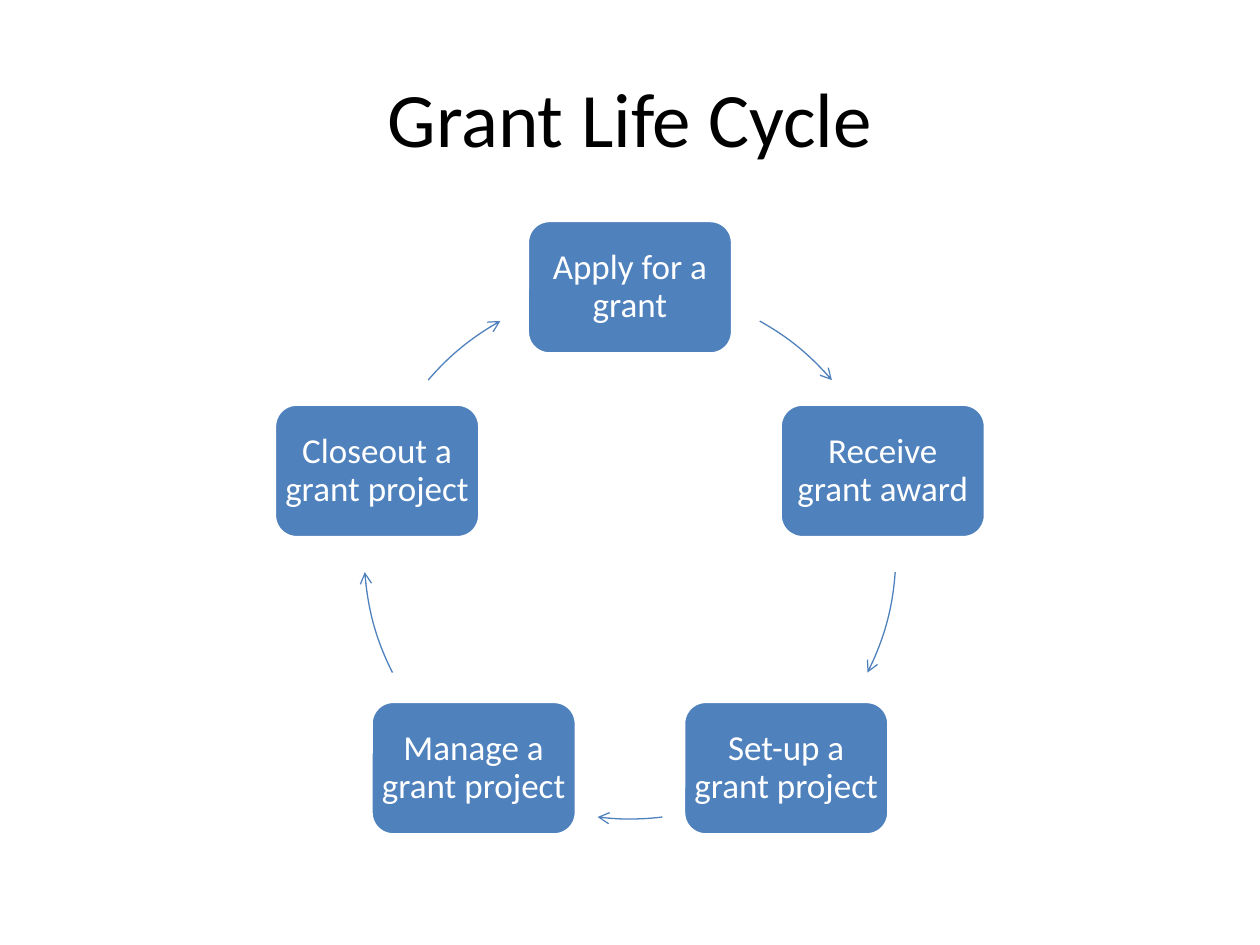
from math import cos, radians, sin

from lxml import etree
from pptx import Presentation
from pptx.dml.color import RGBColor
from pptx.enum.shapes import MSO_SHAPE
from pptx.enum.text import MSO_ANCHOR, PP_ALIGN
from pptx.oxml.ns import qn
from pptx.util import Inches, Pt

ROUND_RECT = MSO_SHAPE.ROUNDED_RECTANGLE
ARC = MSO_SHAPE.ARC
MIDDLE = MSO_ANCHOR.MIDDLE
CENTER = PP_ALIGN.CENTER

COLORS = {"blue": "4F81BD", "white": "FFFFFF", "black": "000000"}
CENTER_X, CENTER_Y, RADIUS = 5, 4.39, 2.11
BOX_W, BOX_H = 1.63, 1.06
STEPS = [
    "Apply for a grant",
    "Receive grant award",
    "Set-up a grant project",
    "Manage a grant project",
    "Closeout a grant project",
]
ARROW_ANGLES = [(299.2, 319.4), (4.1, 26.7), (83, 97), (153.3, 175.9), (220.6, 240.8)]


def rgb(name):
    return RGBColor.from_string(COLORS[name])


def set_text(shape, text, size, color, inset=0.1, spacing=1.0):
    tf = shape.text_frame
    tf.word_wrap = True
    tf.vertical_anchor = MIDDLE
    tf.margin_left = tf.margin_right = Inches(inset)
    tf.margin_top = tf.margin_bottom = Inches(inset)
    p = tf.paragraphs[0]
    p.alignment = CENTER
    p.line_spacing = spacing
    r = p.add_run()
    r.text = text
    r.font.name = "Calibri"
    r.font.size = Pt(size)
    r.font.color.rgb = rgb(color)


def add_title(s, text):
    tb = s.shapes.add_textbox(Inches(0.5), Inches(0.3), Inches(9), Inches(1.25))
    set_text(tb, text, size=44, color="black")


def add_step(s, text, angle):
    x = CENTER_X + RADIUS * cos(radians(angle)) - BOX_W / 2
    y = CENTER_Y + RADIUS * sin(radians(angle)) - BOX_H / 2
    sp = s.shapes.add_shape(ROUND_RECT, Inches(x), Inches(y), Inches(BOX_W), Inches(BOX_H))
    sp.shadow.inherit = False
    sp.fill.solid()
    sp.fill.fore_color.rgb = rgb("blue")
    sp.line.color.rgb = rgb("white")
    sp.line.width = Pt(2)
    set_text(sp, text, size=20, color="white", inset=0.03, spacing=0.9)


def add_arc_arrow(s, start, end):
    sp = s.shapes.add_shape(ARC, Inches(CENTER_X - RADIUS), Inches(CENTER_Y - RADIUS),
                            Inches(2 * RADIUS), Inches(2 * RADIUS))
    sp.shadow.inherit = False
    sp.fill.background()
    sp.adjustments[0] = start * 0.6
    sp.adjustments[1] = end * 0.6
    sp.line.color.rgb = rgb("blue")
    sp.line.width = Pt(0.75)
    ln = sp.line._get_or_add_ln()
    etree.SubElement(ln, qn("a:tailEnd"), type="arrow")


def main():
    prs = Presentation()
    prs.slide_width, prs.slide_height = Inches(10), Inches(7.5)
    s = prs.slides.add_slide(prs.slide_layouts[6])
    add_title(s, "Grant Life Cycle")
    for i, (text, (start, end)) in enumerate(zip(STEPS, ARROW_ANGLES)):
        add_step(s, text, -90 + i * 360 / len(STEPS))
        add_arc_arrow(s, start, end)
    prs.save("out.pptx")


if __name__ == "__main__":
    main()
